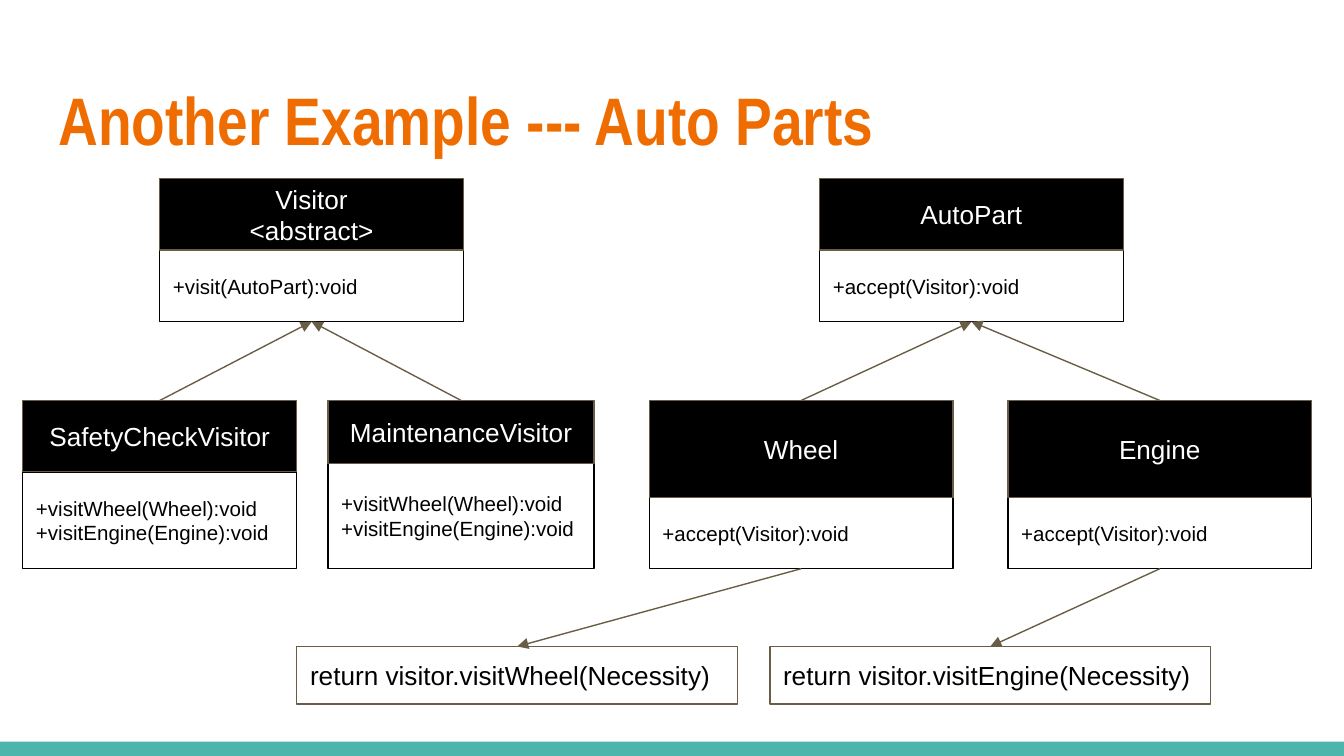
from dataclasses import dataclass

from lxml.etree import SubElement
from pptx import Presentation
from pptx.dml.color import RGBColor
from pptx.enum.shapes import MSO_CONNECTOR, MSO_SHAPE
from pptx.enum.text import MSO_ANCHOR, PP_ALIGN
from pptx.oxml.ns import qn
from pptx.shapes.autoshape import Shape
from pptx.slide import Slide
from pptx.text.text import TextFrame
from pptx.util import Cm, Pt

BLACK = RGBColor(0x00, 0x00, 0x00)
WHITE = RGBColor(0xFF, 0xFF, 0xFF)
BROWN = RGBColor(0x69, 0x5D, 0x46)
ORANGE = RGBColor(0xEF, 0x6C, 0x00)
TEAL = RGBColor(0x4D, 0xB6, 0xAC)
LINE_WIDTH = Pt(0.75)
INSET = Cm(0.25)


@dataclass(frozen=True)
class Box:
    left: float
    top: float
    width: float
    height: float

    @property
    def top_center(self) -> tuple[float, float]:
        return self.left + self.width / 2, self.top

    @property
    def bottom_center(self) -> tuple[float, float]:
        return self.left + self.width / 2, self.top + self.height


@dataclass(frozen=True)
class ClassBox(Box):
    header_height: float
    name: tuple[str, ...]
    methods: tuple[str, ...]


@dataclass(frozen=True)
class Note(Box):
    text: str


PARENT_TOP, CHILD_TOP, NOTE_TOP = 3.38, 7.57, 12.22
PARENT_HEIGHT, CHILD_HEIGHT = 2.7, 3.18
WIDTH = 5.74
VISITS = ("+visitWheel(Wheel):void", "+visitEngine(Engine):void")
ACCEPT = ("+accept(Visitor):void",)

VISITOR = ClassBox(3.02, PARENT_TOP, WIDTH, PARENT_HEIGHT, 1.35,
                   ("Visitor", "<abstract>"), ("+visit(AutoPart):void",))
AUTO_PART = ClassBox(15.49, PARENT_TOP, WIDTH, PARENT_HEIGHT, 1.35, ("AutoPart",), ACCEPT)
SAFETY = ClassBox(0.43, CHILD_TOP, 5.18, CHILD_HEIGHT, 1.35, ("SafetyCheckVisitor",), VISITS)
MAINTENANCE = ClassBox(6.2, CHILD_TOP, 5.03, CHILD_HEIGHT, 1.19, ("MaintenanceVisitor",), VISITS)
WHEEL = ClassBox(12.27, CHILD_TOP, WIDTH, CHILD_HEIGHT, 1.83, ("Wheel",), ACCEPT)
ENGINE = ClassBox(19.05, CHILD_TOP, WIDTH, CHILD_HEIGHT, 1.83, ("Engine",), ACCEPT)
WHEEL_NOTE = Note(5.61, NOTE_TOP, 8.33, 1.09, "return visitor.visitWheel(Necessity)")
ENGINE_NOTE = Note(14.55, NOTE_TOP, 8.33, 1.09, "return visitor.visitEngine(Necessity)")

CLASSES = (VISITOR, SAFETY, MAINTENANCE, AUTO_PART, WHEEL, ENGINE)
INHERITANCE = ((SAFETY, VISITOR), (MAINTENANCE, VISITOR), (WHEEL, AUTO_PART), (ENGINE, AUTO_PART))
NOTES = ((WHEEL, WHEEL_NOTE), (ENGINE, ENGINE_NOTE))


def write_lines(frame: TextFrame, lines: tuple[str, ...], size: float, color: RGBColor,
                alignment: PP_ALIGN = PP_ALIGN.LEFT, font: str = "Arial", bold: bool = False) -> None:
    """Fill a text frame with one paragraph per line."""
    frame.word_wrap = True
    frame.margin_left = frame.margin_right = frame.margin_top = frame.margin_bottom = INSET
    for index, line in enumerate(lines):
        paragraph = frame.add_paragraph() if index else frame.paragraphs[0]
        paragraph.alignment = alignment
        run = paragraph.add_run()
        run.text = line
        run.font.name = font
        run.font.size = Pt(size)
        run.font.bold = bold
        run.font.color.rgb = color


def draw_rectangle(slide: Slide, box: Box, fill: RGBColor, line: RGBColor | None = None) -> Shape:
    """Draw a flat rectangle with an optional outline."""
    shape = slide.shapes.add_shape(MSO_SHAPE.RECTANGLE, Cm(box.left), Cm(box.top),
                                   Cm(box.width), Cm(box.height))
    shape.shadow.inherit = False
    shape.fill.solid()
    shape.fill.fore_color.rgb = fill
    if line is None:
        shape.line.fill.background()
    else:
        shape.line.color.rgb = line
        shape.line.width = LINE_WIDTH
    shape.text_frame.vertical_anchor = MSO_ANCHOR.MIDDLE
    return shape


def draw_class(slide: Slide, box: ClassBox) -> None:
    """Draw the method compartment and the name header of a class."""
    body = Box(box.left, box.top + box.header_height, box.width, box.height - box.header_height)
    header = Box(box.left, box.top, box.width, box.header_height)
    body_shape = draw_rectangle(slide, body, WHITE, BLACK)
    write_lines(body_shape.text_frame, box.methods, 11, BLACK)
    header_shape = draw_rectangle(slide, header, BLACK, BROWN)
    write_lines(header_shape.text_frame, box.name, 14, WHITE, PP_ALIGN.CENTER)


def draw_arrow(slide: Slide, start: tuple[float, float], end: tuple[float, float]) -> None:
    """Draw a straight line with a triangle at its end."""
    connector = slide.shapes.add_connector(MSO_CONNECTOR.STRAIGHT, Cm(start[0]), Cm(start[1]),
                                           Cm(end[0]), Cm(end[1]))
    connector.line.color.rgb = BROWN
    connector.line.width = LINE_WIDTH
    SubElement(connector.line._get_or_add_ln(), qn("a:tailEnd"), type="triangle")
    SubElement(connector._element.spPr, qn("a:effectLst"))


def draw_title(slide: Slide, text: str) -> None:
    """Write the slide title."""
    title = slide.shapes.add_textbox(Cm(0.86), Cm(1.24), Cm(23.67), Cm(1.96))
    write_lines(title.text_frame, (text,), 36, ORANGE, font="Arial Narrow", bold=True)


def main() -> None:
    """Build and save the class diagram slide."""
    presentation = Presentation()
    presentation.slide_width = Cm(25.4)
    presentation.slide_height = Cm(14.29)
    slide = presentation.slides.add_slide(presentation.slide_layouts[6])
    draw_rectangle(slide, Box(0, 14.02, 25.4, 0.27), TEAL)
    draw_title(slide, "Another Example --- Auto Parts")
    for class_box in CLASSES:
        draw_class(slide, class_box)
    for child, parent in INHERITANCE:
        draw_arrow(slide, child.top_center, parent.bottom_center)
    for owner, note in NOTES:
        note_shape = draw_rectangle(slide, note, WHITE, BROWN)
        write_lines(note_shape.text_frame, (note.text,), 14, BLACK)
        draw_arrow(slide, owner.bottom_center, note.top_center)
    presentation.save("out.pptx")


if __name__ == "__main__":
    main()
